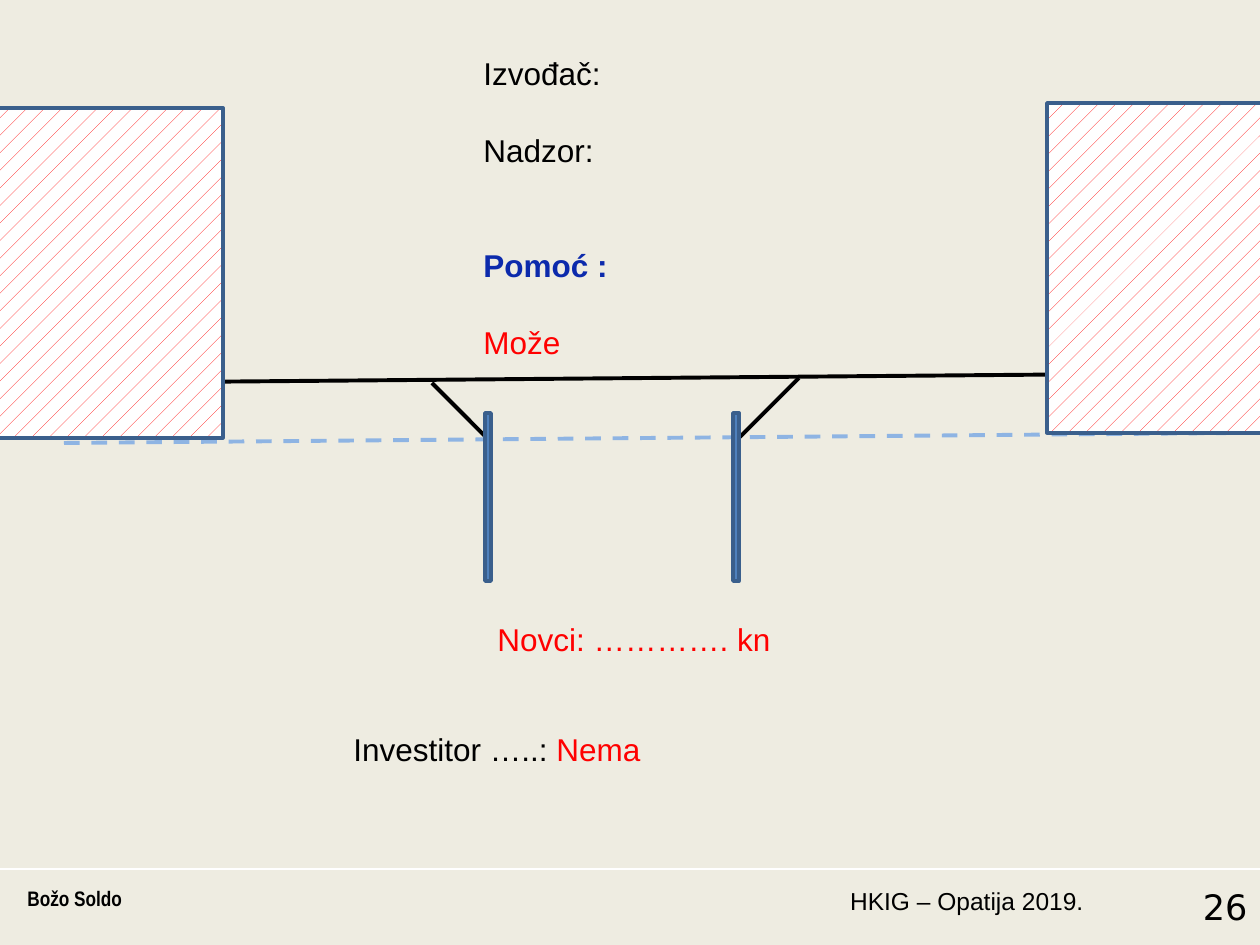
from dataclasses import dataclass

from lxml import etree
from pptx import Presentation, util as u
from pptx.dml.color import RGBColor
from pptx.enum import dml, shapes, text
from pptx.oxml.ns import qn

PX = u.Inches(1) / 126


def px(length):
    return u.Emu(round(length * PX))


@dataclass(frozen=True)
class Theme:
    background: str = "EEECE1"
    black: str = "000000"
    white: str = "FFFFFF"
    red: str = "FF0000"
    heading: str = "0C2AAC"
    water: str = "8EB4E3"
    pile: str = "4F81BD"
    outline: str = "3A5F8C"
    body: int = 18
    footer: int = 14
    author: int = 12
    number: int = 20


class SlideBuilder:
    def __init__(self, slide, theme):
        self.slide = slide
        self.theme = theme
        self.fill(slide.background.fill, theme.background)

    def fill(self, fill, color):
        fill.solid()
        fill.fore_color.rgb = RGBColor.from_string(color)

    def line(self, start, end, color, width=2.25, dash=None):
        connector = self.slide.shapes.add_connector(
            shapes.MSO_CONNECTOR.STRAIGHT, *map(px, start + end))
        etree.SubElement(connector._element.spPr, qn("a:effectLst"))
        connector.line.color.rgb = RGBColor.from_string(color)
        connector.line.width = u.Pt(width)
        if dash:
            connector.line.dash_style = dash

    def outlined_box(self, *box):
        shape = self.slide.shapes.add_shape(shapes.MSO_SHAPE.RECTANGLE, *map(px, box))
        shape.shadow.inherit = False
        shape.line.color.rgb = RGBColor.from_string(self.theme.outline)
        shape.line.width = u.Pt(2)
        return shape

    def building(self, *box):
        fill = self.outlined_box(*box).fill
        fill.patterned()
        fill.pattern = dml.MSO_PATTERN.PERCENT_5
        fill.fore_color.rgb = RGBColor.from_string(self.theme.red)
        fill.back_color.rgb = RGBColor.from_string(self.theme.white)

    def pile(self, *box):
        self.fill(self.outlined_box(*box).fill, self.theme.pile)

    def text(self, box, paragraphs, size, align=text.PP_ALIGN.LEFT, wrap=True,
             top=6, font="Arial"):
        """Each paragraph is (space before in points, [(words, color, bold), ...])."""
        frame = self.slide.shapes.add_textbox(*map(px, box)).text_frame
        frame.word_wrap = wrap
        frame.margin_top = px(top)
        for index, (space, runs) in enumerate(paragraphs):
            paragraph = frame.paragraphs[0] if index == 0 else frame.add_paragraph()
            paragraph.alignment = align
            paragraph.space_before = u.Pt(space)
            for words, color, bold in runs:
                run = paragraph.add_run()
                run.text = words
                run.font.color.rgb = RGBColor.from_string(color)
                formats = {"name": font, "size": u.Pt(size), "bold": bold}
                for name, value in formats.items():
                    setattr(run.font, name, value)


def main():
    presentation = Presentation()
    presentation.slide_width, presentation.slide_height = px(1260), px(945)
    theme = Theme()
    builder = SlideBuilder(
        presentation.slides.add_slide(presentation.slide_layouts[6]), theme)
    black, red = theme.black, theme.red
    right = text.PP_ALIGN.RIGHT

    builder.line((0, 869), (1260, 869), theme.white, 1.5)
    builder.text((828, 880, 268, 65), [(0, [("HKIG – Opatija 2019.", black, False)])],
                 theme.footer, right)
    builder.text((15, 880, 824, 65), [(0, [("Božo Soldo", black, True)])],
                 theme.author, font="Arial Narrow")
    builder.text((1106, 880, 154, 65), [(0, [("26", black, False)])],
                 theme.number, right, font="DejaVu Sans")

    builder.line((64, 383), (1235, 373), black)
    builder.line((64, 443), (1235, 433), theme.water, dash=dml.MSO_LINE.DASH)
    builder.line((740, 437), (799, 378), black)
    builder.line((432, 383), (491, 442), black)
    for left, top in ((-25, 108), (1047, 103)):
        builder.building(left, top, 248, 330)

    builder.text((471, 45, 268, 318), [
        (0, [("Izvođač:", black, False)]),
        (22.5, [("Nadzor:", black, False)]),
        (44, [("Pomoć :", theme.heading, True)]),
        (22.5, [("Može", red, False)]),
    ], theme.body, top=9)
    for left in (485, 733):
        builder.pile(left, 413, 6, 168)

    builder.text((485, 611, 301, 50), [(0, [("Novci: …………. kn", red, False)])],
                 theme.body, wrap=False, top=9)
    builder.text((341, 721, 315, 50),
                 [(0, [("Investitor …..: ", black, False), ("Nema", red, False)])],
                 theme.body, wrap=False, top=9)
    presentation.save("out.pptx")


if __name__ == "__main__":
    main()
